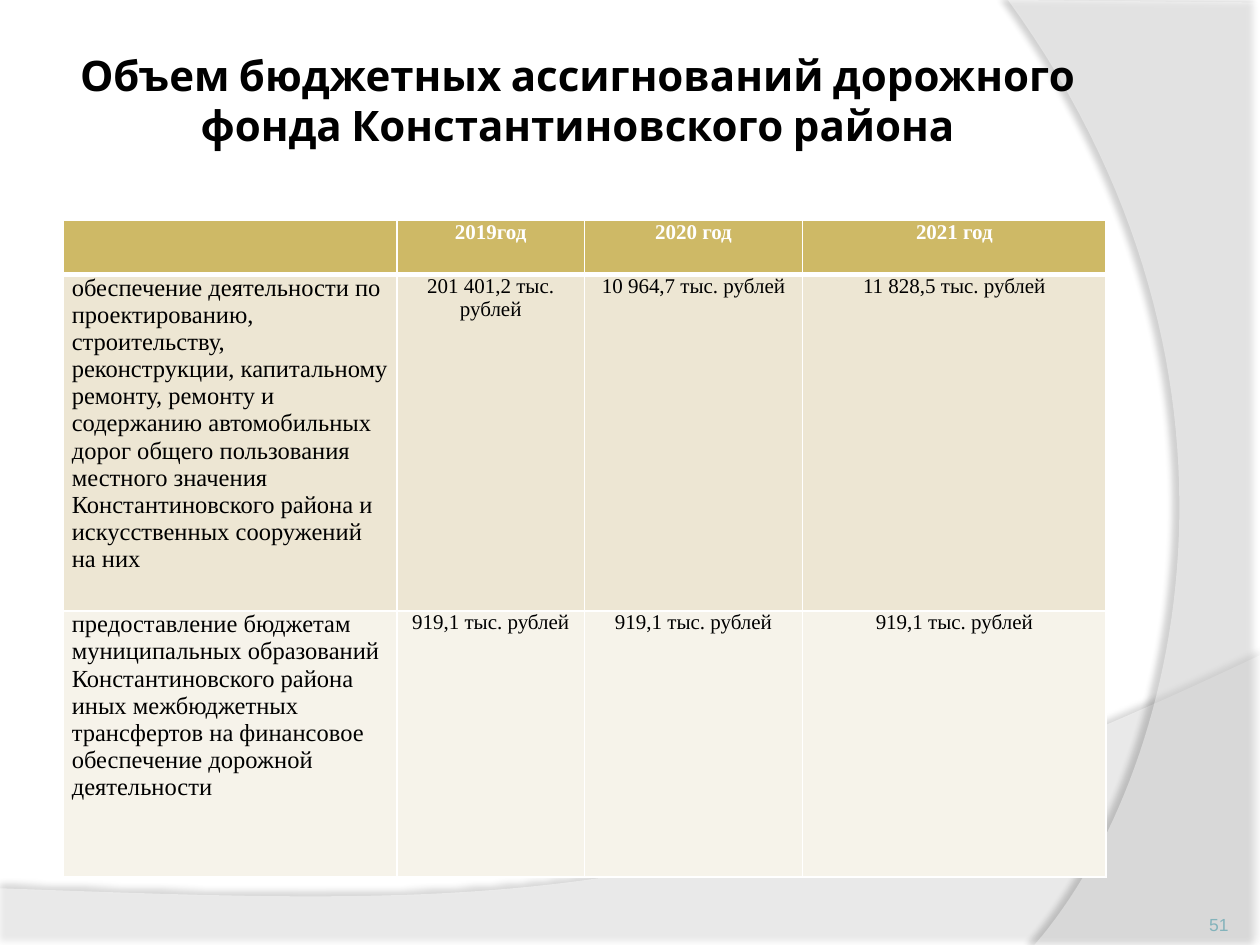
from lxml import etree
from pptx import Presentation
from pptx import util as u
from pptx.dml.color import RGBColor
from pptx.enum import text
from pptx.oxml.ns import qn

WHITE = RGBColor(0xFF, 0xFF, 0xFF)
BLACK = RGBColor(0, 0, 0)
GOLD = RGBColor(0xCE, 0xB9, 0x66)
SAND = RGBColor(0xED, 0xE6, 0xD3)
CREAM = RGBColor(0xF6, 0xF3, 0xEA)
TEAL = RGBColor(0x83, 0xB3, 0xBB)
SERIF = "Times New Roman"
LEFT, CENTER, RIGHT = (text.PP_ALIGN.LEFT, text.PP_ALIGN.CENTER,
                       text.PP_ALIGN.RIGHT)


def bezier(p0, p1, p2, p3, steps=60):
    """Points along a cubic curve, without its start."""
    for i in range(1, steps + 1):
        t = i / steps
        k = ((1 - t) ** 3, 3 * t * (1 - t) ** 2, 3 * t * t * (1 - t), t ** 3)
        yield tuple(sum(w * p[axis] for w, p in zip(k, (p0, p1, p2, p3)))
                    for axis in (0, 1))


def add_alpha(parent, percent):
    etree.SubElement(parent, qn("a:alpha"), val=str(percent * 1000))


class SlideBuilder:
    def __init__(self, prs):
        self.s = prs.slides.add_slide(prs.slide_layouts[5])

    def put_text(self, tf, words, align, color, margins, **font):
        """Put one formatted paragraph into a text frame."""
        p = tf.paragraphs[0]
        p.alignment = align
        r = p.add_run()
        r.text = words
        for name, value in font.items():
            setattr(r.font, name, value)
        r.font.color.rgb = color
        sides = ("margin_left", "margin_top", "margin_right", "margin_bottom")
        for side, value in zip(sides, margins):
            setattr(tf, side, u.Inches(value))

    def place(self, sp, box):
        for name, value in zip(("left", "top", "width", "height"), box):
            setattr(sp, name, u.Inches(value))

    def band(self, points, opacity, shadow_opacity, distance, angle):
        """Translucent white background band with a soft shadow."""
        points = [(u.Inches(x), u.Inches(y)) for x, y in points]
        fb = self.s.shapes.build_freeform(*points[0])
        fb.add_line_segments(points[1:], close=True)
        sp = fb.convert_to_shape()
        sp.fill.solid()
        sp.fill.fore_color.rgb = WHITE
        sp.line.fill.background()
        sp.shadow.inherit = False
        props = sp._element.spPr
        add_alpha(props.find(qn("a:solidFill"))[0], opacity)
        shadow = etree.SubElement(
            props.find(qn("a:effectLst")), qn("a:outerShdw"),
            blurRad=str(u.Pt(4)), dist=str(u.Pt(distance)),
            dir=str(angle * 60000), algn="ctr", rotWithShape="0")
        color = etree.SubElement(shadow, qn("a:srgbClr"), val=str(BLACK))
        add_alpha(color, shadow_opacity)

    def title(self, words, box):
        sp = self.s.shapes.title
        self.s.shapes._spTree.append(sp._element)  # in front of the bands
        self.place(sp, box)
        tf = sp.text_frame
        tf.word_wrap = True
        tf.auto_size = text.MSO_AUTO_SIZE.NONE
        tf.vertical_anchor = text.MSO_ANCHOR.MIDDLE
        self.put_text(tf, words, CENTER, BLACK, (0.05, 0.05, 0.05, 0.32),
                      size=u.Pt(24), name="Cabin", bold=True)

    def borders(self, cell, widths):
        props = cell._tc.get_or_add_tcPr()
        for i, (side, width) in enumerate(zip("LRTB", widths)):
            ln = etree.Element(qn("a:ln" + side), w=str(u.Pt(width)))
            fill = etree.SubElement(ln, qn("a:solidFill"))
            etree.SubElement(fill, qn("a:srgbClr"), val=str(WHITE))
            props.insert(i, ln)

    def table(self, rows, box, widths, heights, fills):
        table = self.s.shapes.add_table(
            len(rows), len(widths), *map(u.Inches, box)).table
        for col, width in zip(table.columns, widths):
            col.width = u.Inches(width)
        for i, row in enumerate(rows):
            table.rows[i].height = u.Inches(heights[i])
            header = i == 0
            for j, words in enumerate(row):
                cell = table.cell(i, j)
                label = j == 0 and not header
                cell.fill.solid()
                cell.fill.fore_color.rgb = fills[i]
                self.borders(cell, (1, 1, 3 if i == 1 else 1,
                                    3 if header else 1))
                for side in ("left", "right", "top", "bottom"):
                    margin = 0.07 if side in ("left", "right") else 0
                    setattr(cell, "margin_" + side, u.Inches(margin))
                if words:
                    self.put_text(cell.text_frame, words,
                                  LEFT if label else CENTER,
                                  WHITE if header else BLACK, (),
                                  size=u.Pt(14 if label else 12), name=SERIF,
                                  bold=header)

    def number(self, words, box):
        sp = self.s.shapes.add_textbox(*map(u.Inches, box))
        tf = sp.text_frame
        tf.word_wrap = True
        tf.vertical_anchor = text.MSO_ANCHOR.BOTTOM
        self.put_text(tf, words, RIGHT, TEAL, (0, 0, 0, 0),
                      size=u.Pt(10), name="Arial")


def main():
    prs = Presentation()
    prs.slide_width, prs.slide_height = u.Inches(10), u.Inches(7.5)
    slide = SlideBuilder(prs)

    # Background bands: bottom wave and right arc
    slide.band([(0, 7.05), (0, 7.51), (10, 7.51), (10, 5.2),
                *bezier((10, 5.2), (5.59, 7.29), (3.91, 7.19), (0, 7.05))],
               45, 35, 3.5, 270)
    slide.band([(10, 0.02), (10, 7.5), (8.21, 7.5),
                *bezier((8.21, 7.5), (9.35, 6.19), (10.18, 3), (8, 0))],
               40, 45, 4, 180)

    # Title
    slide.title("Объем бюджетных ассигнований дорожного фонда "
                "Константиновского района", (0.5, 0.3, 8.17, 1.25))

    # Road fund by year
    transfer = "919,1 тыс. рублей"
    rows = [
        ("", "2019год", "2020 год", "2021 год"),
        ("обеспечение деятельности по проектированию, строительству, "
         "реконструкции, капитальному ремонту, ремонту и содержанию "
         "автомобильных дорог общего пользования местного значения "
         "Константиновского района и искусственных сооружений на них",
         "201 401,2 тыс. рублей", "10 964,7 тыс. рублей",
         "11 828,5 тыс. рублей"),
        ("предоставление бюджетам муниципальных образований "
         "Константиновского района иных межбюджетных трансфертов на "
         "финансовое обеспечение дорожной деятельности",
         transfer, transfer, transfer),
    ]
    slide.table(rows, (0.5, 1.75, 8.28, 5.21), (2.65, 1.49, 1.73, 2.41),
                (0.43, 2.67, 2.11), (GOLD, SAND, CREAM))

    # Slide number
    slide.number("51", (8.92, 7.02, 0.83, 0.4))

    prs.save("out.pptx")


if __name__ == "__main__":
    main()
